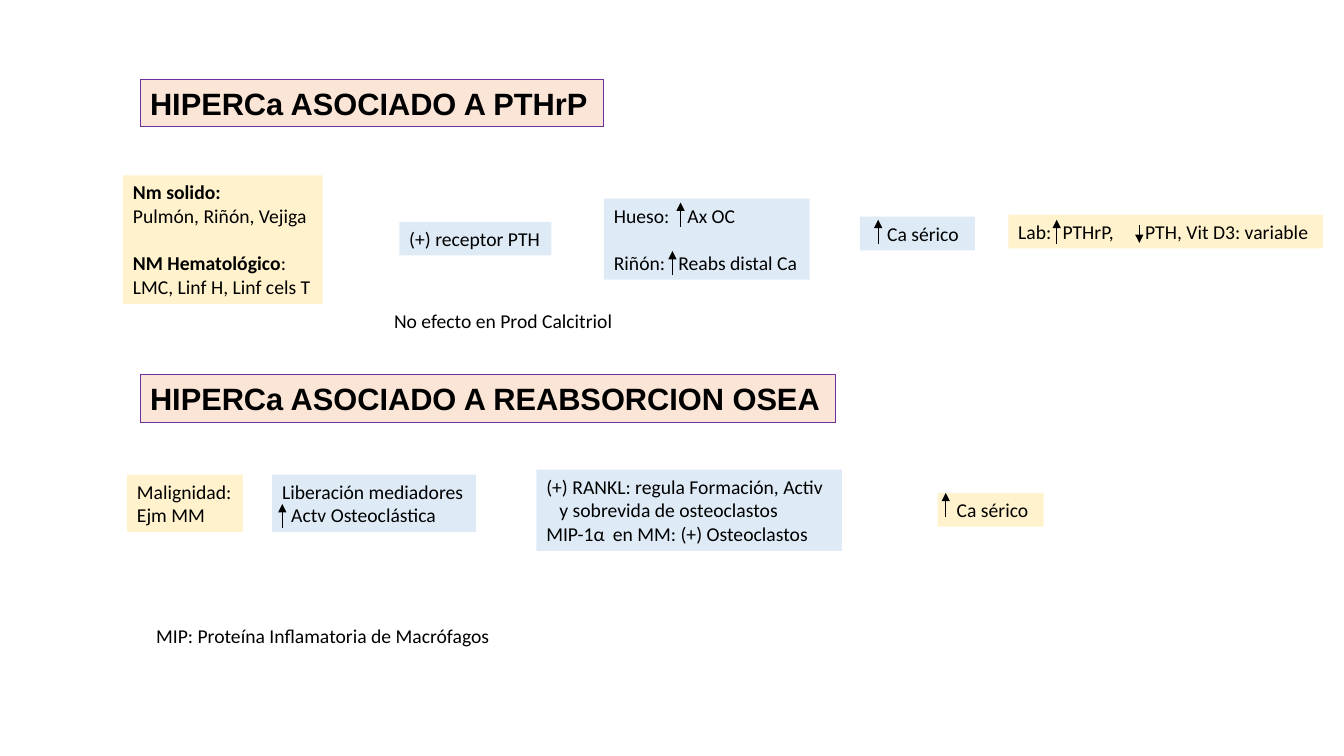
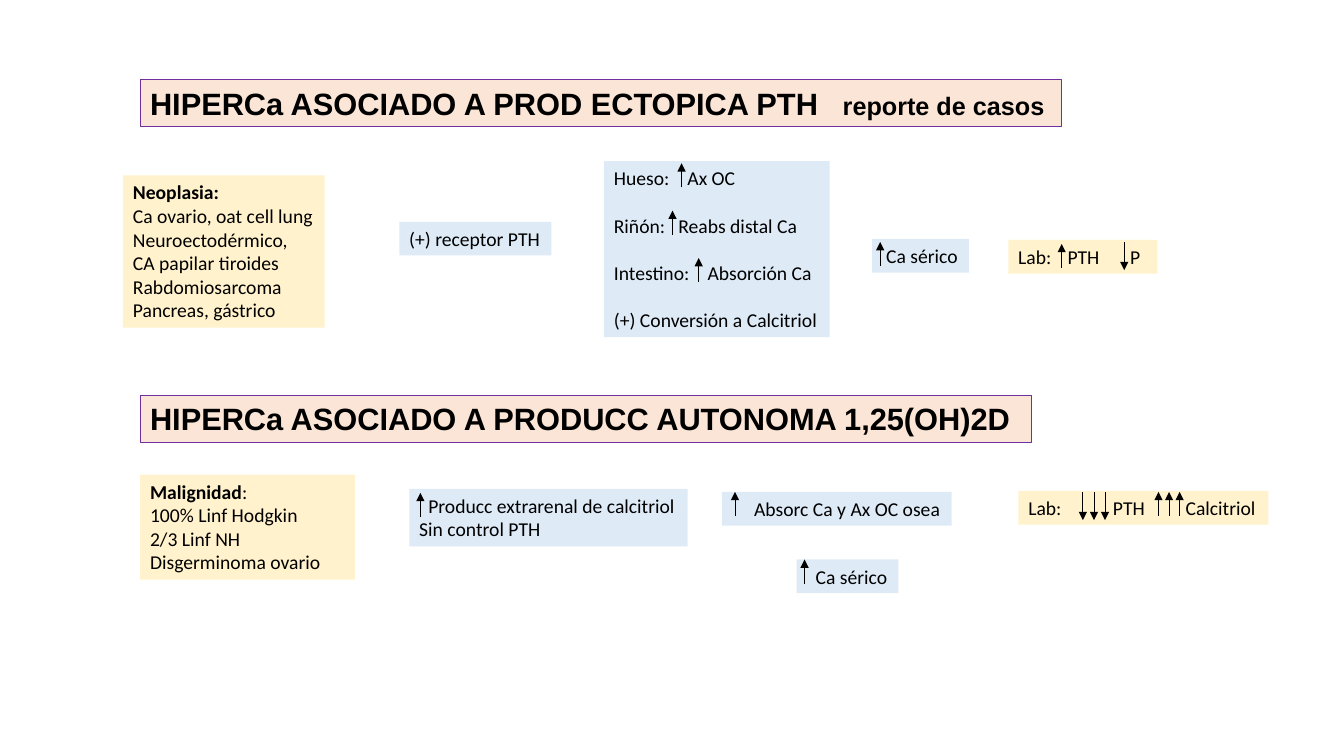
"""Build two slides on the mechanisms of hypercalcaemia in malignancy."""
from dataclasses import dataclass

from lxml.etree import SubElement
from pptx import Presentation
from pptx.dml.color import RGBColor
from pptx.enum.shapes import MSO_CONNECTOR
from pptx.enum.text import MSO_ANCHOR, MSO_AUTO_SIZE
from pptx.oxml.ns import qn
from pptx.util import Inches, Pt

BLACK = RGBColor(0x00, 0x00, 0x00)
PEACH = RGBColor(0xFB, 0xE5, 0xD6)
PURPLE = RGBColor(0x70, 0x30, 0xA0)
CREAM = RGBColor(0xFF, 0xF2, 0xCC)
PALE_BLUE = RGBColor(0xDE, 0xEB, 0xF7)

BODY = {"name": "Calibri", "size": Pt(14), "bold": False}
HEADING = {"name": "Arial", "size": Pt(22), "bold": True}
SUBHEADING = {**HEADING, "size": Pt(18)}
STRONG = {**BODY, "bold": True}
FRAME = {
    "word_wrap": True,
    "auto_size": MSO_AUTO_SIZE.NONE,
    "vertical_anchor": MSO_ANCHOR.TOP,
    "margin_left": Inches(0.1),
    "margin_right": Inches(0),
    "margin_top": Inches(0.05),
    "margin_bottom": Inches(0.05),
}
LINE_HEIGHT = 0.235
LINE_GAP = Pt(17)
TITLE_LEFT = 1.39
TITLE_HEIGHT = 0.47
RISE = 0.24


@dataclass
class Line:
    """One paragraph: formatted runs, tab stops and a gap above."""
    runs: list
    tabs: tuple = ()
    gap: bool = False


def plain(text, *tabs, gap=False):
    """Return a body line with tab stops in inches."""
    return Line([(text, BODY)], tabs, gap)


def label(text, ending="", gap=False):
    """Return a bold line with an optional regular ending."""
    runs = [(text, STRONG)]
    if ending:
        runs.append((ending, BODY))
    return Line(runs, gap=gap)


def apply_format(target, values):
    """Set every attribute named in the format values."""
    for attribute, value in values.items():
        setattr(target, attribute, value)


def add_tabs(paragraph, positions):
    """Give the paragraph left tab stops."""
    tab_list = SubElement(paragraph._p.get_or_add_pPr(), qn("a:tabLst"))
    for position in positions:
        SubElement(tab_list, qn("a:tab"), pos=str(Inches(position)), algn="l")


def add_text(slide, left, top, width, height, lines, fill=None):
    """Add a text panel, filled when a colour is given."""
    panel = slide.shapes.add_textbox(Inches(left), Inches(top), Inches(width), Inches(height))
    if fill is not None:
        panel.fill.solid()
        panel.fill.fore_color.rgb = fill
    frame = panel.text_frame
    apply_format(frame, FRAME)
    for index, line in enumerate(lines):
        paragraph = frame.add_paragraph() if index else frame.paragraphs[0]
        if line.tabs:
            add_tabs(paragraph, line.tabs)
        if line.gap:
            paragraph.space_before = LINE_GAP
        for text, values in line.runs:
            run = paragraph.add_run()
            run.text = text
            apply_format(run.font, values)
            run.font.color.rgb = BLACK
    return panel


def add_title(slide, top, width, *runs, tabs=()):
    """Add a bordered section title."""
    title = add_text(slide, TITLE_LEFT, top, width, TITLE_HEIGHT, [Line(list(runs), tabs)], PEACH)
    title.line.color.rgb = PURPLE
    title.line.width = Pt(0.75)


def add_step(slide, left, top, width, fill, *lines):
    """Add a step whose height follows its lines and gaps."""
    rows = len(lines) + sum(line.gap for line in lines)
    add_text(slide, left, top, width, 0.1 + rows * LINE_HEIGHT, lines, fill)


def add_arrow(slide, x, start, end):
    """Add a thin vertical arrow."""
    arrow = slide.shapes.add_connector(
        MSO_CONNECTOR.STRAIGHT, Inches(x), Inches(start), Inches(x), Inches(end))
    arrow.line.color.rgb = BLACK
    arrow.line.width = Pt(0.5)
    SubElement(arrow.line._get_or_add_ln(), qn("a:tailEnd"), type="triangle")
    SubElement(arrow._element.spPr, qn("a:effectLst"))


def add_rises(slide, *tips):
    """Add an upward arrow at each tip."""
    for x, top in tips:
        add_arrow(slide, x, top + RISE, top)


def add_receptor(slide):
    """Add the receptor step common to both PTH pathways."""
    add_step(slide, 3.96, 2.2, 1.51, PALE_BLUE, plain("(+) receptor PTH"))


def build_pthrp_and_bone(prs):
    """Build the PTHrP and bone resorption slide."""
    slide = prs.slides.add_slide(prs.slide_layouts[6])
    add_title(slide, 0.79, 4.6, ("HIPERCa ASOCIADO A PTHrP", HEADING))
    add_step(slide, 1.22, 1.74, 1.98, CREAM,
             label("Nm solido:"),
             plain("Pulmón, Riñón, Vejiga"),
             label("NM Hematológico", ":", gap=True),
             plain("LMC, Linf H, Linf cels T"))
    add_receptor(slide)
    add_step(slide, 5.99, 1.97, 2.04, PALE_BLUE,
             plain("Hueso:\tAx OC", 0.73),
             plain("Riñón:\tReabs distal Ca", 0.64, gap=True))
    add_step(slide, 8.53, 2.15, 1.14, PALE_BLUE, plain("\tCa sérico", 0.17))
    add_step(slide, 10, 2.13, 3.12, CREAM,
             plain("Lab:\tPTHrP,\tPTH, Vit D3: variable", 0.44, 1.26))
    add_text(slide, 3.81, 3.02, 2.39, 0.34, [plain("No efecto en Prod Calcitriol")])

    add_title(slide, 3.72, 6.9, ("HIPERCa ASOCIADO A REABSORCION OSEA", HEADING))
    add_step(slide, 1.26, 4.71, 1.15, CREAM, plain("Malignidad:"), plain("Ejm MM"))
    add_step(slide, 2.7, 4.71, 2.02, PALE_BLUE,
             plain("Liberación mediadores"), plain("\tActv Osteoclástica", 0.09))
    add_step(slide, 5.32, 4.66, 3.03, PALE_BLUE,
             plain("(+) RANKL: regula Formación, Activ"),
             plain("\ty sobrevida de osteoclastos", 0.13),
             plain("MIP-1α\ten MM: (+) Osteoclastos", 0.66))
    add_step(slide, 9.3, 4.89, 1.05, CREAM, plain("\tCa sérico", 0.09))
    add_text(slide, 1.45, 6.14, 3.63, 0.34, [plain("MIP: Proteína Inflamatoria de Macrófagos")])

    add_rises(slide, (6.75, 2.01), (6.67, 2.49), (8.71, 2.18), (10.48, 2.18),
              (2.8, 5), (9.38, 4.89))
    add_arrow(slide, 11.3, 2.23, 2.41)


def build_ectopic_and_calcitriol(prs):
    """Build the ectopic PTH and autonomous calcitriol slide."""
    slide = prs.slides.add_slide(prs.slide_layouts[6])
    add_title(slide, 0.79, 9.14,
              ("HIPERCa ASOCIADO A PROD ECTOPICA PTH\t", HEADING),
              ("reporte de casos", SUBHEADING), tabs=(6.87,))
    add_step(slide, 1.22, 1.74, 2, CREAM,
             label("Neoplasia:"),
             plain("Ca ovario, oat cell lung"),
             plain("Neuroectodérmico,"),
             plain("CA papilar tiroides"),
             plain("Rabdomiosarcoma"),
             plain("Pancreas, gástrico"))
    add_receptor(slide)
    add_step(slide, 5.99, 1.6, 2.24, PALE_BLUE,
             plain("Hueso:\tAx OC", 0.73),
             plain("Riñón:\tReabs distal Ca", 0.64, gap=True),
             plain("Intestino:\tAbsorción Ca", 0.93, gap=True),
             plain("(+) Conversión a Calcitriol", gap=True))
    add_step(slide, 8.65, 2.37, 0.96, PALE_BLUE, plain("\tCa sérico", 0.04))
    add_step(slide, 10, 2.38, 1.48, CREAM, plain("Lab:\tPTH\tP", 0.49, 1.11))

    add_title(slide, 3.92, 8.84, ("HIPERCa ASOCIADO A PRODUCC AUTONOMA 1,25(OH)2D", HEADING))
    add_step(slide, 1.39, 4.71, 2.13, CREAM,
             label("Malignidad", ":"),
             plain("100% Linf Hodgkin"),
             plain("2/3 Linf NH"),
             plain("Disgerminoma ovario"))
    add_step(slide, 4.06, 4.85, 2.76, PALE_BLUE,
             plain("\tProducc extrarenal de calcitriol", 0.09), plain("Sin control PTH"))
    add_step(slide, 7.16, 4.88, 2.28, PALE_BLUE, plain("\tAbsorc Ca y Ax OC osea", 0.22))
    add_step(slide, 7.9, 5.55, 1.01, PALE_BLUE, plain("\tCa sérico", 0.09))
    add_step(slide, 10.1, 4.87, 2.48, CREAM, plain("Lab:\tPTH\tCalcitriol", 0.84, 1.56))

    add_rises(slide, (6.76, 1.62), (6.67, 2.09), (6.93, 2.56), (8.73, 2.4), (10.53, 2.42),
              (4.17, 4.89), (7.29, 4.88), (7.98, 5.55))
    add_arrow(slide, 11.15, 2.4, 2.68)
    for column in range(3):
        add_arrow(slide, 10.74 + column * 0.11, 4.88, 5.16)
        add_rises(slide, (11.49 + column * 0.105, 4.88))


def main():
    """Create and save the presentation."""
    prs = Presentation()
    prs.slide_width = Inches(13.33)
    prs.slide_height = Inches(7.5)
    build_pthrp_and_bone(prs)
    build_ectopic_and_calcitriol(prs)
    prs.save("out.pptx")


if __name__ == "__main__":
    main()
